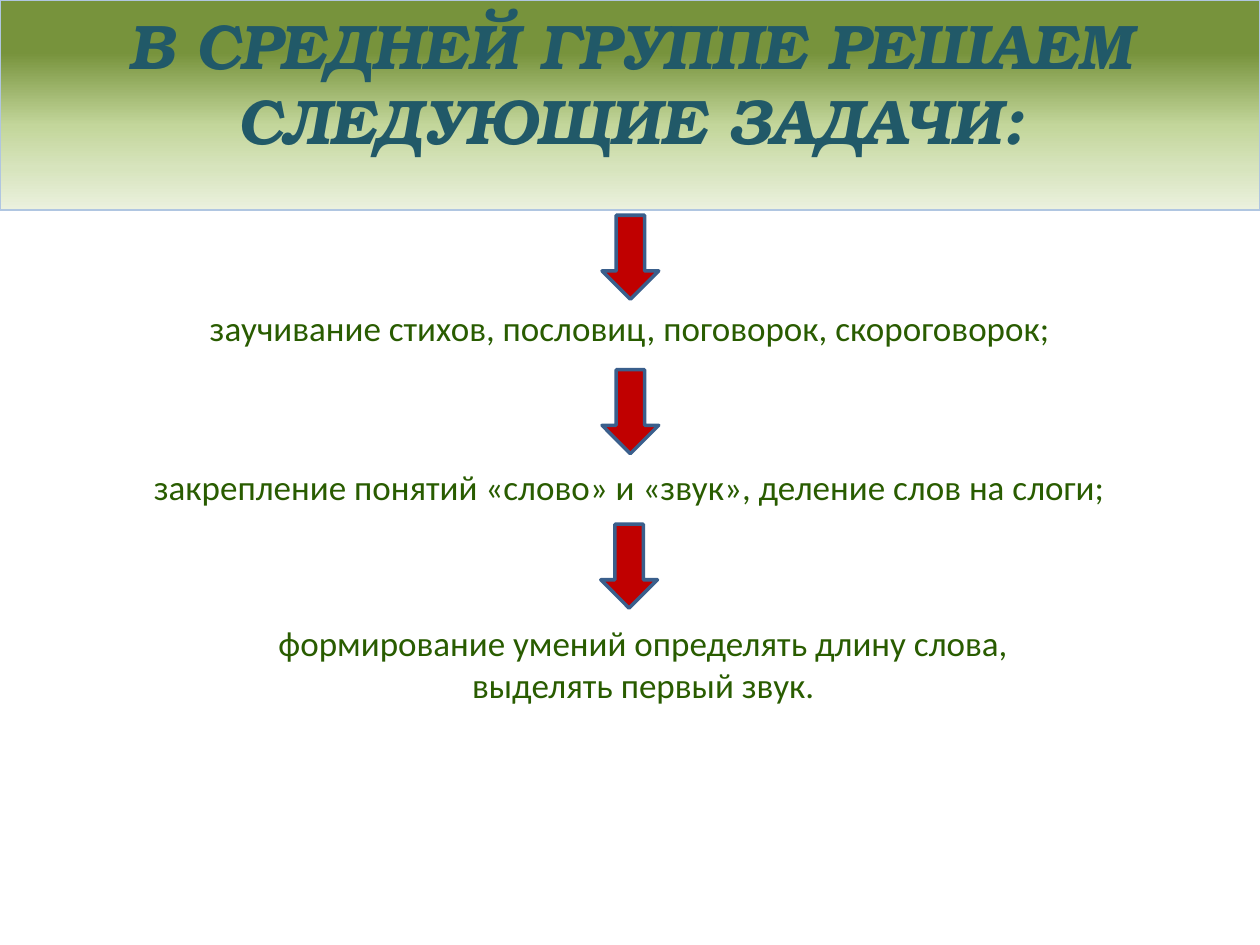
"""Build the slide listing the speech tasks of the middle group."""
from dataclasses import dataclass

from lxml.etree import SubElement
from pptx import Presentation
from pptx.dml.color import RGBColor
from pptx.enum.shapes import MSO_SHAPE
from pptx.enum.text import MSO_ANCHOR, PP_ALIGN
from pptx.oxml.ns import qn
from pptx.util import Pt


@dataclass(frozen=True)
class Theme:
    head_font: str = "TeX Gyre Bonum"
    body_font: str = "Calibri"
    head_size: int = 36
    body_size: int = 20
    head: str = "215968"
    body: str = "295C00"
    arrow: str = "C00000"
    edge: str = "3A5F8C"
    rim: str = "B0C6E1"
    grad: tuple = ((25, "77933C"), (60, "C3D69B"), (80, "D7E4BD"), (100, "EBF1DE"))


class Deck:
    def __init__(self, theme, slide):
        self.theme = theme
        self.slide = slide

    def shape(self, kind, box, edge, width):
        item = self.slide.shapes.add_shape(kind, *map(Pt, box))
        item.shadow.inherit = False
        item.line.color.rgb = RGBColor.from_string(edge)
        item.line.width = Pt(width)
        return item

    def label(self, item, text, anchor, name, size, color):
        frame = item.text_frame
        frame.word_wrap = True
        frame.vertical_anchor = anchor
        line = frame.paragraphs[0]
        line.text = text
        line.alignment = PP_ALIGN.CENTER
        font = line.font
        font.name, font.size = name, Pt(size)
        font.color.rgb = RGBColor.from_string(color)
        return font

    def title(self, text, box):
        look = self.theme
        band = self.shape(MSO_SHAPE.RECTANGLE, box, look.rim, 0.75)
        band.fill.gradient()
        band.fill.gradient_angle = 270
        stops = band.element.spPr.find(qn("a:gradFill")).find(qn("a:gsLst"))
        for old in list(stops):
            stops.remove(old)
        for spot, color in look.grad:
            stop = SubElement(stops, qn("a:gs"), pos=str(spot * 1000))
            SubElement(stop, qn("a:srgbClr"), val=color)
        font = self.label(band, text, MSO_ANCHOR.TOP, look.head_font,
                          look.head_size, look.head)
        font.bold = font.italic = True

    def arrow(self, left, top):
        look = self.theme
        item = self.shape(MSO_SHAPE.DOWN_ARROW, (left, top, 32.4, 48), look.edge, 2)
        item.fill.solid()
        item.fill.fore_color.rgb = RGBColor.from_string(look.arrow)

    def task(self, text, box, anchor):
        look = self.theme
        item = self.slide.shapes.add_textbox(*map(Pt, box))
        self.label(item, text, anchor, look.body_font, look.body_size, look.body)


def main():
    show = Presentation()
    show.slide_width, show.slide_height = Pt(720), Pt(540)
    deck = Deck(Theme(), show.slides.add_slide(show.slide_layouts[6]))
    deck.title("В СРЕДНЕЙ ГРУППЕ РЕШАЕМ СЛЕДУЮЩИЕ ЗАДАЧИ:", (0, 0, 720, 120))
    tasks = (
        ("заучивание стихов, пословиц, поговорок, скороговорок;",
         (51, 171.5, 618, 31.5), MSO_ANCHOR.TOP, 344),
        ("закрепление понятий «слово» и «звук», деление слов на слоги;",
         (18.7, 252.7, 682, 41), MSO_ANCHOR.BOTTOM, 344),
        ("формирование умений определять длину слова, выделять первый звук.",
         (131.8, 365.8, 471.6, 41), MSO_ANCHOR.BOTTOM, 343.3),
    )
    for rank, (text, box, anchor, left) in enumerate(tasks):
        deck.arrow(left, 123 + 88.25 * rank)
        deck.task(text, box, anchor)
    show.save("out.pptx")


if __name__ == "__main__":
    main()
